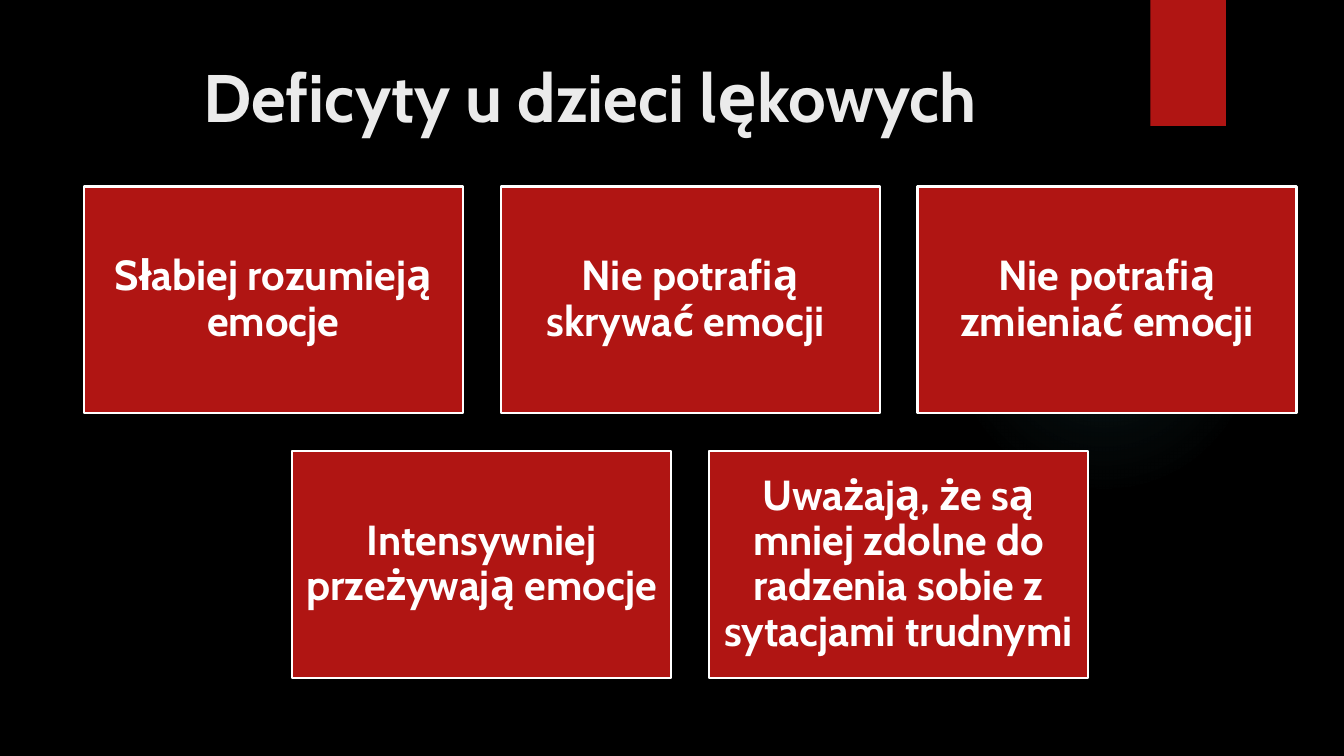
import pptx
import pptx.dml.color
import pptx.enum.shapes
import pptx.enum.text
import pptx.oxml
import pptx.util
from dataclasses import dataclass
from pptx.util import Inches

ALIGN = pptx.enum.text.PP_ALIGN
ANCHOR = pptx.enum.text.MSO_ANCHOR
SHAPE = pptx.enum.shapes.MSO_SHAPE
DRAWING_NS = "http://schemas.openxmlformats.org/drawingml/2006/main"


@dataclass(frozen=True)
class Theme:
    font: str = "Cabin"
    background: str = "000000"
    accent: str = "B01513"
    outline: str = "FFFFFF"
    card_text: str = "FFFFFF"
    title_text: str = "EBEBEB"
    glow: str = "50B9C1"
    title_size: int = 48
    card_size: int = 30
    outline_width: float = 1.5


THEME = Theme()

# Card grid: each row is centred on the same axis
CARD_ROWS = [
    ["Słabiej rozumieją emocje", "Nie potrafią skrywać emocji ", "Nie potrafią zmieniać emocji"],
    ["Intensywniej przeżywają emocje",
     "Uważają, że są mniej zdolne do radzenia sobie z sytacjami trudnymi"],
]
CARD_WIDTH, CARD_HEIGHT, CARD_GAP = 3.76, 2.25, 0.375
GRID_CENTER, GRID_TOP = 6.845, 1.85
CARD_INSET = 0.12


def color(value):
    return pptx.dml.color.RGBColor.from_string(value)


def add_text(frame, text, size, text_color):
    """Write one centred bold paragraph."""
    para = frame.paragraphs[0]
    para.alignment = ALIGN.CENTER
    span = para.add_run()
    span.text = text
    span.font.name = THEME.font
    span.font.size = pptx.util.Pt(size)
    span.font.bold = True
    span.font.color.rgb = color(text_color)
    return para


def add_block(page, kind, left, top, width, height):
    """Add a borderless accent-coloured shape."""
    box = page.shapes.add_shape(kind, Inches(left), Inches(top), Inches(width), Inches(height))
    box.shadow.inherit = False
    box.fill.solid()
    box.fill.fore_color.rgb = color(THEME.accent)
    box.line.fill.background()
    return box


def add_glow(page):
    """Add the faint round light that fades out at its edge."""
    glow = add_block(page, SHAPE.OVAL, 9.41, 1.83, 3.08, 3.08)
    stops = "".join(
        f'<a:gs pos="{position * 1000}"><a:srgbClr val="{THEME.glow}">'
        f'<a:alpha val="{alpha * 1000}"/></a:srgbClr></a:gs>'
        for position, alpha in [(0, 7), (36, 6), (69, 0)]
    )
    gradient = pptx.oxml.parse_xml(
        f'<a:gradFill xmlns:a="{DRAWING_NS}"><a:gsLst>{stops}</a:gsLst><a:path path="circle">'
        '<a:fillToRect l="50000" t="50000" r="50000" b="50000"/></a:path></a:gradFill>'
    )
    properties = glow.element.spPr
    properties.replace(properties.find(f"{{{DRAWING_NS}}}solidFill"), gradient)


def add_title(page, text):
    title = page.shapes.title
    title.left, title.top = Inches(0.71), Inches(0.5)
    title.width, title.height = Inches(10.29), Inches(1.53)
    frame = title.text_frame
    frame.word_wrap = True
    frame.auto_size = pptx.enum.text.MSO_AUTO_SIZE.NONE
    frame.vertical_anchor = ANCHOR.TOP
    add_text(frame, text, THEME.title_size, THEME.title_text)


def add_card(page, left, top, text):
    card = add_block(page, SHAPE.RECTANGLE, left, top, CARD_WIDTH, CARD_HEIGHT)
    card.line.color.rgb = color(THEME.outline)
    card.line.width = pptx.util.Pt(THEME.outline_width)
    frame = card.text_frame
    frame.word_wrap = True
    frame.vertical_anchor = ANCHOR.MIDDLE
    frame.margin_left = frame.margin_right = Inches(CARD_INSET)
    frame.margin_top = frame.margin_bottom = Inches(CARD_INSET)
    para = add_text(frame, text, THEME.card_size, THEME.card_text)
    para.line_spacing = 0.9


def add_card_grid(page, rows):
    for row_index, row in enumerate(rows):
        row_width = len(row) * CARD_WIDTH + (len(row) - 1) * CARD_GAP
        row_left = GRID_CENTER - row_width / 2
        top = GRID_TOP + row_index * (CARD_HEIGHT + CARD_GAP)
        for column, text in enumerate(row):
            add_card(page, row_left + column * (CARD_WIDTH + CARD_GAP), top, text)


def main():
    deck = pptx.Presentation()
    deck.slide_width, deck.slide_height = Inches(13.33), Inches(7.5)
    page = deck.slides.add_slide(deck.slide_layouts.get_by_name("Title Only"))
    page.background.fill.solid()
    page.background.fill.fore_color.rgb = color(THEME.background)

    # Decoration
    add_glow(page)
    add_block(page, SHAPE.RECTANGLE, 11.41, 0, 0.75, 1.25)

    # Content
    add_title(page, "Deficyty u dzieci lękowych")
    add_card_grid(page, CARD_ROWS)
    deck.save("out.pptx")


if __name__ == "__main__":
    main()
